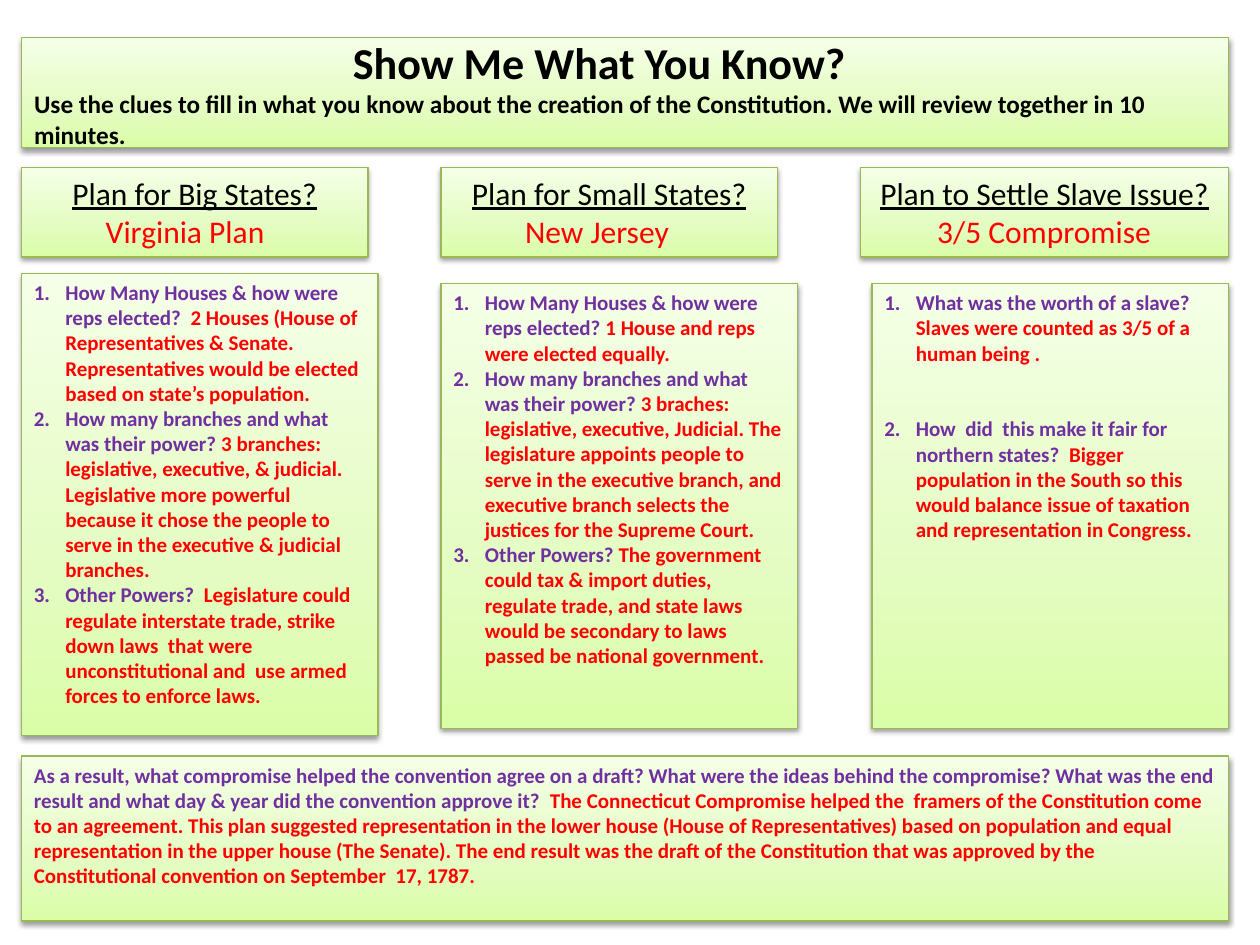
"""Build a one-slide review sheet on the plans behind the Constitution."""
from copy import deepcopy

from lxml.etree import SubElement
from pptx import Presentation
from pptx.dml.color import RGBColor
from pptx.enum.shapes import MSO_SHAPE
from pptx.enum.text import MSO_ANCHOR, MSO_AUTO_SIZE, PP_ALIGN
from pptx.oxml.ns import qn
from pptx.util import Inches, Pt

BLACK = RGBColor(0x00, 0x00, 0x00)
RED = RGBColor(0xFF, 0x00, 0x00)
PURPLE = RGBColor(0x70, 0x30, 0xA0)
BORDER = RGBColor(0x98, 0xB9, 0x55)
GRADIENT = [
    (0, RGBColor(0xDA, 0xFD, 0xA7)),
    (0.35, RGBColor(0xE4, 0xFC, 0xC2)),
    (1, RGBColor(0xF5, 0xFF, 0xE7)),
]
LEFT, FULL_WIDTH, CARD_WIDTH = 0.17, 9.58, 2.83


def style_panel(shape, left, top, width, height, anchor=MSO_ANCHOR.TOP):
    shape.left, shape.top = Inches(left), Inches(top)
    shape.width, shape.height = Inches(width), Inches(height)
    shape.fill.gradient()
    shape.fill.gradient_angle = 90
    stop_list = shape._element.spPr.find(qn("a:gradFill")).find(qn("a:gsLst"))
    stop_list.append(deepcopy(stop_list[0]))
    for stop, (position, color) in zip(shape.fill.gradient_stops, GRADIENT):
        stop.position = position
        stop.color.rgb = color
    shape.line.color.rgb = BORDER
    shape.line.width = Pt(0.75)
    shape.shadow.inherit = False
    effects = shape._element.spPr.find(qn("a:effectLst"))
    shadow = SubElement(effects, qn("a:outerShdw"), blurRad=str(Pt(3.1)),
                        dist=str(Pt(1.6)), dir="5400000", rotWithShape="0")
    shadow_color = SubElement(shadow, qn("a:srgbClr"), val="000000")
    SubElement(shadow_color, qn("a:alpha"), val="38000")
    frame = shape.text_frame
    frame.word_wrap = True
    frame.auto_size = MSO_AUTO_SIZE.NONE
    frame.vertical_anchor = anchor
    return frame


def write_paragraph(frame, *parts, size=12, bold=True, underline=False,
                    align=PP_ALIGN.LEFT, margin=0, number=None, space_before=0):
    paragraph = frame.paragraphs[0]
    if paragraph.runs:
        paragraph = frame.add_paragraph()
    paragraph.alignment = align
    paragraph.space_before = Pt(space_before)
    properties = paragraph._p.get_or_add_pPr()
    properties.set("marL", str(Inches(margin)))
    if number:
        properties.set("indent", str(Inches(-margin)))
        numbering = SubElement(properties, qn("a:buAutoNum"), type="arabicPeriod")
        if number > 1:
            numbering.set("startAt", "2")
    for text, color in parts:
        run = paragraph.add_run()
        run.text = text
        run.font.name = "Calibri"
        run.font.size = Pt(size)
        run.font.bold = bold
        run.font.underline = underline
        run.font.color.rgb = color


presentation = Presentation()
presentation.slide_width, presentation.slide_height = Inches(10), Inches(7.5)
slide = presentation.slides.add_slide(presentation.slide_layouts[5])

title_frame = style_panel(slide.shapes.title, LEFT, 0.3, FULL_WIDTH, 0.87,
                          anchor=MSO_ANCHOR.MIDDLE)
write_paragraph(title_frame, ("Show Me What You Know?", BLACK), size=25.2, margin=2.53)
write_paragraph(
    title_frame,
    ("Use the clues to fill in what you know about the creation of the Constitution. "
     "We will review together in 10 minutes.", BLACK),
    size=14.4,
)

headings = [
    (LEFT, 2.75, "Plan for Big States?", "Virginia Plan", 0.57),
    (3.5, 2.67, "Plan for Small States?", "New Jersey", 0.57),
    (6.83, 2.92, "Plan to Settle Slave Issue?", "3/5 Compromise", 0.51),
]
for left, width, question, answer, margin in headings:
    shape = slide.shapes.add_shape(MSO_SHAPE.RECTANGLE, 0, 0, 0, 0)
    frame = style_panel(shape, left, 1.33, width, 0.71)
    write_paragraph(frame, (question, BLACK), size=18, bold=False, underline=True,
                    align=PP_ALIGN.CENTER)
    write_paragraph(frame, (answer, RED), size=18, bold=False, margin=margin)

HOUSES = "How Many Houses & how were reps elected? "
BRANCHES = "How many branches and what was their power? "
cards = [
    (LEFT, 2.17, 3.67, 0, [
        (HOUSES, " 2 Houses (House of Representatives & Senate.  Representatives would be "
                 "elected based on state’s population."),
        (BRANCHES, "3 branches: legislative, executive, & judicial. Legislative more powerful "
                   "because it chose the people to serve in the executive & judicial branches."),
        ("Other Powers?  ", "Legislature could regulate interstate trade, strike down laws  that "
                            "were unconstitutional and  use armed forces to enforce laws."),
    ]),
    (3.5, 2.25, 3.53, 0, [
        (HOUSES, "1 House and reps were elected equally."),
        (BRANCHES, "3 braches: legislative, executive, Judicial. The legislature appoints people "
                   "to serve in the executive branch, and executive branch selects the justices "
                   "for the Supreme Court."),
        ("Other Powers? ", "The government could tax & import duties, regulate trade, and state "
                           "laws would be secondary to laws passed be national government."),
    ]),
    (6.92, 2.25, 3.53, 29, [
        ("What was the worth of a slave? ", "Slaves were counted as 3/5 of a human being ."),
        ("How  did  this make it fair for northern states?  ",
         "Bigger population in the South so this would balance issue of taxation and "
         "representation in Congress."),
    ]),
]
for left, top, height, gap, items in cards:
    shape = slide.shapes.add_shape(MSO_SHAPE.RECTANGLE, 0, 0, 0, 0)
    frame = style_panel(shape, left, top, CARD_WIDTH, height)
    for number, (question, answer) in enumerate(items, start=1):
        write_paragraph(frame, (question, PURPLE), (answer, RED), margin=0.25,
                        number=number, space_before=gap if number > 1 else 0)

shape = slide.shapes.add_shape(MSO_SHAPE.RECTANGLE, 0, 0, 0, 0)
summary_frame = style_panel(shape, LEFT, 6, FULL_WIDTH, 1.31)
write_paragraph(
    summary_frame,
    ("As a result, what compromise helped the convention agree on a draft? What were the ideas "
     "behind the compromise? What was the end result and what day & year did the convention "
     "approve it?  ", PURPLE),
    ("The Connecticut Compromise helped the  framers of the Constitution come to an agreement. "
     "This plan suggested representation in the lower house (House of Representatives) based on "
     "population and equal representation in the upper house (The Senate). The end result was "
     "the draft of the Constitution that was approved by the Constitutional convention on "
     "September  17, 1787.", RED),
)

presentation.save("out.pptx")
